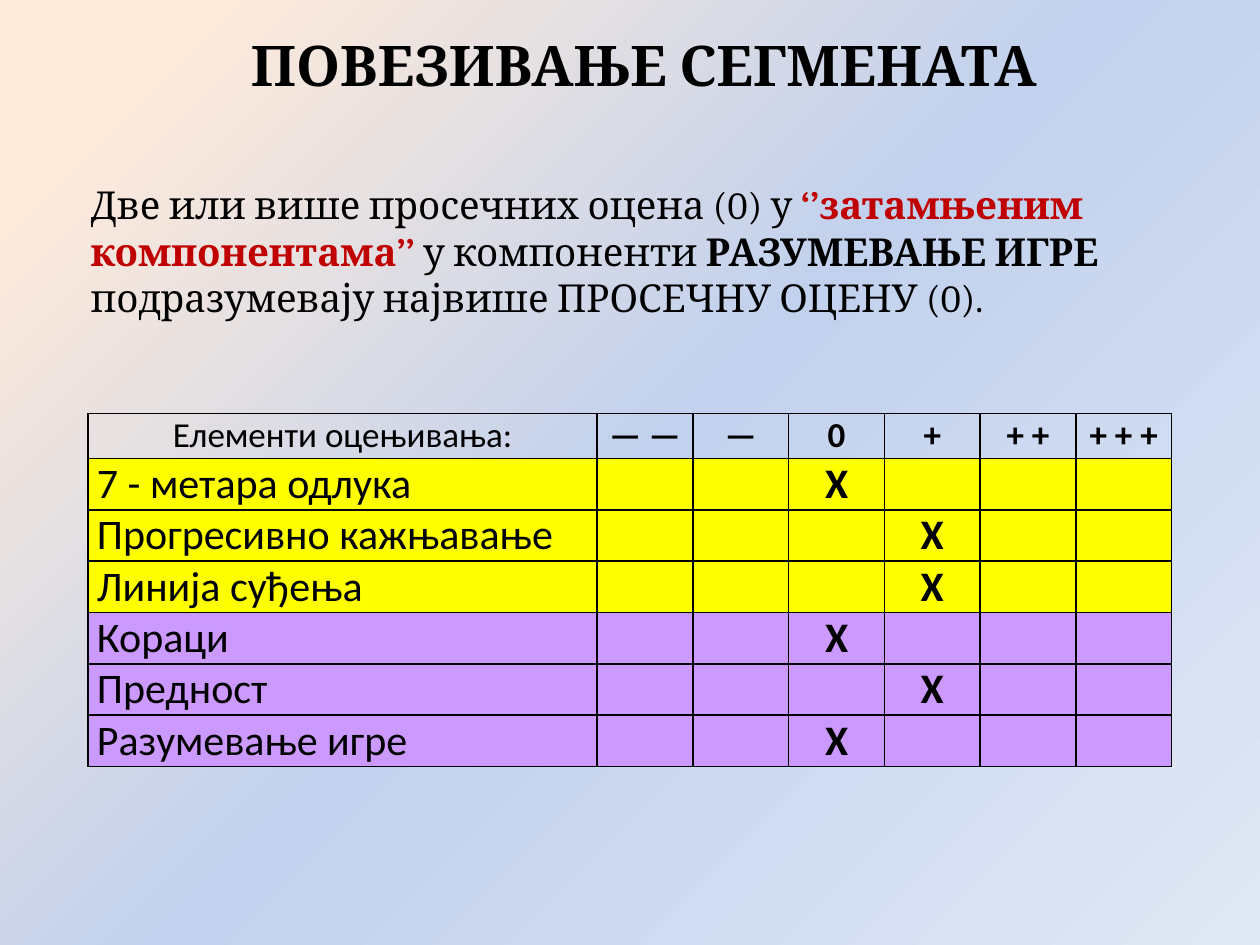
from copy import deepcopy
from dataclasses import dataclass

from lxml import etree
from pptx import Presentation
from pptx.dml.color import RGBColor
from pptx.enum import text as t
from pptx.oxml.ns import qn
from pptx.util import Inches, Pt


@dataclass(frozen=True)
class Theme:
    ink: str = "000000"
    accent: str = "C00000"
    yellow: str = "FFFF00"
    purple: str = "CC99FF"
    stops: tuple = ((0.1, "FDEADA"), (0.5, "C2D1ED"), (1, "E1E8F5"))
    serif: str = "Cambria"
    sans: str = "Calibri"
    title: int = 32
    body: int = 22
    head: int = 20
    row: int = 24


@dataclass(frozen=True)
class Part:
    text: str
    color: str = Theme.ink
    bold: bool = False


@dataclass(frozen=True)
class Row:
    label: str
    mark: int
    fill: str


THEME = Theme()
HEADS = ("Елементи оцењивања:", "— —", "—", "0", "+", "+ +", "+ + +")
ROWS = (
    Row("7 - метара одлука", 3, THEME.yellow),
    Row("Прогресивно кажњавање", 4, THEME.yellow),
    Row("Линија суђења", 4, THEME.yellow),
    Row("Кораци", 3, THEME.purple),
    Row("Предност", 4, THEME.purple),
    Row("Разумевање игре", 3, THEME.purple),
)
TITLE = (Part("ПОВЕЗИВАЊЕ СЕГМЕНАТА", bold=True),)
BODY = (
    Part("Две или више просечних оцена (0) у "),
    Part("‘’затамњеним компонентама’’ ", THEME.accent, True),
    Part("у компоненти "),
    Part("РАЗУМЕВАЊЕ ИГРЕ", bold=True),
    Part(" подразумевају највише ПРОСЕЧНУ ОЦЕНУ (0)."),
)


def style(font, name: str, size: int, color: str, bold: bool) -> None:
    font.name, font.size, font.bold = name, Pt(size), bold
    font.color.rgb = RGBColor.from_string(color)


def paint(slide) -> None:
    """Give the slide its diagonal three-stop background."""
    fill = slide.background.fill
    fill.gradient()
    fill.gradient_angle = 315
    stops = slide.element.find(".//" + qn("a:gsLst"))
    stops.append(deepcopy(stops[-1]))
    for stop, (place, color) in zip(fill.gradient_stops, THEME.stops):
        stop.position = place
        stop.color.rgb = RGBColor.from_string(color)


def write(shape, box: tuple, parts: tuple, size: int, align, anchor) -> None:
    """Place a placeholder and fill it with one paragraph of styled parts."""
    shape.left, shape.top, shape.width, shape.height = map(Inches, box)
    frame = shape.text_frame
    frame.word_wrap = True
    frame.auto_size = t.MSO_AUTO_SIZE.NONE
    frame.vertical_anchor = anchor
    para = frame.paragraphs[0]
    para.alignment = align
    para.space_before = Pt(0)
    for part in parts:
        run = para.add_run()
        run.text = part.text
        style(run.font, THEME.serif, size, part.color, part.bold)


def edge(cell) -> None:
    """Rule all four sides; borders must precede the fill in the XML."""
    props = cell._tc.get_or_add_tcPr()
    for spot, side in enumerate(("lnL", "lnR", "lnT", "lnB")):
        line = etree.Element(qn("a:" + side), w=str(Pt(1)))
        solid = etree.SubElement(line, qn("a:solidFill"))
        etree.SubElement(solid, qn("a:srgbClr"), val=THEME.ink)
        props.insert(spot, line)


def put(cell, words: str, size: int, center: bool, bold: bool, fill: str = "") -> None:
    cell.margin_left = cell.margin_right = Inches(0.07)
    cell.margin_top = cell.margin_bottom = 0
    cell.vertical_anchor = t.MSO_ANCHOR.MIDDLE
    para = cell.text_frame.paragraphs[0]
    para.text = words
    para.alignment = t.PP_ALIGN.CENTER if center else t.PP_ALIGN.LEFT
    style(para.font, THEME.sans, size, THEME.ink, bold)
    for run in para.runs:
        style(run.font, THEME.sans, size, THEME.ink, bold)
    if fill:
        cell.fill.solid()
        cell.fill.fore_color.rgb = RGBColor.from_string(fill)
    else:
        cell.fill.background()
    edge(cell)


def grid(slide) -> None:
    """Draw the table of marks."""
    box = map(Inches, (0.7, 3.28, 8.6, 2.52))
    table = slide.shapes.add_table(len(ROWS) + 1, len(HEADS), *box).table
    table.first_row = table.horz_banding = False
    for col, column in enumerate(table.columns):
        column.width = Inches(0.76 if col else 4.04)
    for line in table.rows:
        line.height = Inches(0.36)
    for col, words in enumerate(HEADS):
        put(table.cell(0, col), words, THEME.head, True, col > 0)
    for num, row in enumerate(ROWS, 1):
        for col in range(len(HEADS)):
            words = "Х" if col == row.mark else "" if col else row.label
            put(table.cell(num, col), words, THEME.row, col > 0, col > 0, row.fill)


def main() -> None:
    deck = Presentation()
    deck.slide_width, deck.slide_height = Inches(10), Inches(7.5)
    slide = deck.slides.add_slide(deck.slide_layouts[0])
    paint(slide)
    write(slide.shapes.title, (0.62, 0.16, 8.98, 0.7), TITLE, THEME.title,
          t.PP_ALIGN.CENTER, t.MSO_ANCHOR.MIDDLE)
    write(slide.placeholders[1], (0.62, 1.39, 8.98, 1.34), BODY, THEME.body,
          t.PP_ALIGN.LEFT, t.MSO_ANCHOR.TOP)
    grid(slide)
    deck.save("out.pptx")


if __name__ == "__main__":
    main()
